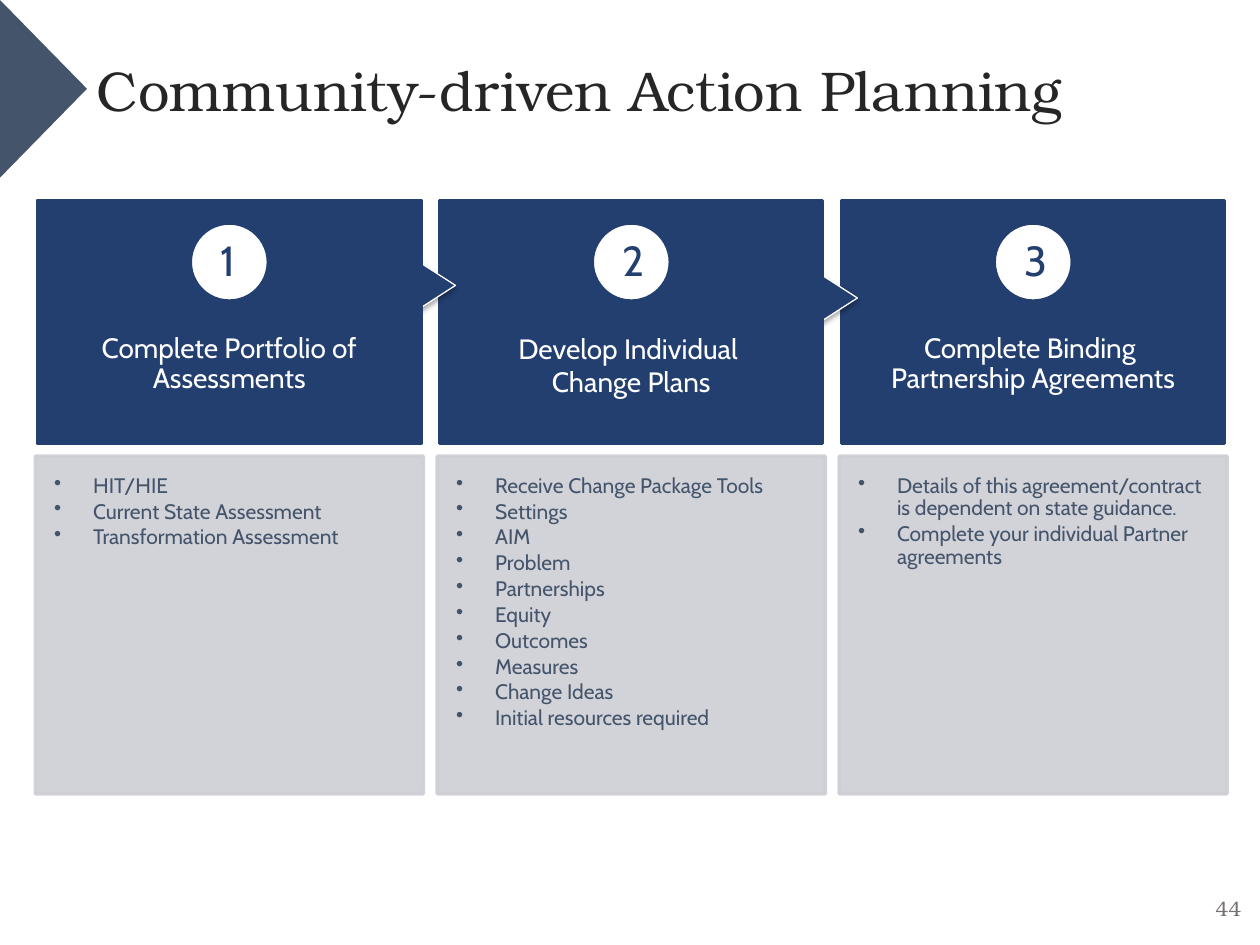
from dataclasses import dataclass
from typing import Optional

from lxml import etree
from pptx import Presentation
from pptx.dml.color import RGBColor
from pptx.enum.shapes import MSO_SHAPE
from pptx.enum.text import MSO_ANCHOR, MSO_AUTO_SIZE, PP_ALIGN
from pptx.oxml.ns import qn
from pptx.util import Inches, Pt

RECTANGLE, OVAL, TRIANGLE = MSO_SHAPE.RECTANGLE, MSO_SHAPE.OVAL, MSO_SHAPE.ISOSCELES_TRIANGLE
TOP, MIDDLE = MSO_ANCHOR.TOP, MSO_ANCHOR.MIDDLE
LEFT, CENTER = PP_ALIGN.LEFT, PP_ALIGN.CENTER
GROW = MSO_AUTO_SIZE.SHAPE_TO_FIT_TEXT


@dataclass(frozen=True)
class Theme:
    navy: str = "233F70"
    slate: str = "44546A"
    panel: str = "CDCFD5"
    white: str = "FFFFFF"
    title_color: str = "262626"
    page_color: str = "767171"
    body_font: str = "Cabin"
    title_font: str = "TeX Gyre Bonum"
    title_size: float = 32
    number_size: float = 24
    heading_size: float = 16
    body_size: float = 12
    border: float = 2
    thin_border: float = 0.75


@dataclass(frozen=True)
class Box:
    left: float
    top: float
    width: float
    height: float


@dataclass(frozen=True)
class Grid:
    left: float = 0.3
    pitch: float = 3.19
    column_width: float = 3.04
    heading_top: float = 1.59
    heading_height: float = 1.93
    panel_top: float = 3.62
    panel_height: float = 2.68
    panel_overhang: float = 0.02

    def heading(self, column: int) -> Box:
        return Box(self.left + column * self.pitch, self.heading_top,
                   self.column_width, self.heading_height)

    def panel(self, column: int) -> Box:
        return Box(self.left + column * self.pitch - self.panel_overhang, self.panel_top,
                   self.column_width + 2 * self.panel_overhang, self.panel_height)

    def centered(self, column: int, top: float, width: float, height: float) -> Box:
        center = self.left + column * self.pitch + self.column_width / 2
        return Box(center - width / 2, top, width, height)


@dataclass(frozen=True)
class TextStyle:
    size: float
    color: str
    font: str
    align: PP_ALIGN = LEFT
    line_spacing: Optional[float] = None
    space_after: float = 0
    bullet_indent: float = 0


@dataclass(frozen=True)
class Step:
    heading: tuple[str, ...]
    items: tuple[str, ...]
    arrow_top: Optional[float] = None
    heading_spacing: Optional[float] = 0.9
    heading_space_after: float = 5.6


THEME = Theme()
GRID = Grid()
DEFAULT_INSETS = (0.1, 0.05, 0.1, 0.05)
STEPS = (
    Step(("Complete Portfolio of Assessments",),
         ("HIT/HIE", "Current State Assessment", "Transformation Assessment"), 2.04),
    Step(("Develop Individual ", "Change Plans"),
         ("Receive Change Package Tools", "Settings", "AIM", "Problem", "Partnerships",
          "Equity", "Outcomes", "Measures", "Change Ideas", "Initial resources required"),
         2.14, None, 0),
    Step(("Complete Binding \vPartnership Agreements",),
         ("Details of this agreement/contract is dependent on state guidance.",
          "Complete your individual Partner agreements")),
)


def place(box: Box) -> tuple[int, ...]:
    return tuple(Inches(value) for value in (box.left, box.top, box.width, box.height))


def add_bullet(paragraph, indent: float) -> None:
    properties = paragraph._p.get_or_add_pPr()
    properties.set("marL", str(Inches(indent)))
    properties.set("indent", str(-Inches(indent)))
    etree.SubElement(properties, qn("a:buChar"), char="•")


def write_text(shape, lines: tuple[str, ...], style: TextStyle,
               insets=DEFAULT_INSETS, anchor=TOP) -> None:
    frame = shape.text_frame
    frame.word_wrap = True
    frame.vertical_anchor = anchor
    (frame.margin_left, frame.margin_top,
     frame.margin_right, frame.margin_bottom) = map(Inches, insets)
    frame.text = "\n".join(lines)
    for paragraph in frame.paragraphs:
        if style.bullet_indent:
            add_bullet(paragraph, style.bullet_indent)
        paragraph.alignment = style.align
        paragraph.line_spacing = style.line_spacing
        paragraph.space_after = Pt(style.space_after)
        paragraph.font.size = Pt(style.size)
        paragraph.font.name = style.font
        paragraph.font.color.rgb = RGBColor.from_string(style.color)


def add_filled(slide, kind: MSO_SHAPE, box: Box, fill: str, line: str, width: float):
    shape = slide.shapes.add_shape(kind, *place(box))
    shape.shadow.inherit = False
    shape.fill.solid()
    shape.fill.fore_color.rgb = RGBColor.from_string(fill)
    shape.line.color.rgb = RGBColor.from_string(line)
    shape.line.width = Pt(width)
    return shape


def add_label(slide, box: Box, text: str, style: TextStyle,
              insets=DEFAULT_INSETS, anchor=TOP):
    label = slide.shapes.add_textbox(*place(box))
    write_text(label, (text,), style, insets, anchor)
    return label


def set_opacity(shape, percent: int) -> None:
    for color in shape.element.spPr.iter(qn("a:srgbClr")):
        etree.SubElement(color, qn("a:alpha"), val=str(percent * 1000))


def add_arrow(slide, column: int, top: float) -> None:
    width, height = 0.58, 0.45
    edge = GRID.left + column * GRID.pitch + GRID.column_width
    arrow = add_filled(slide, TRIANGLE, Box(edge + 0.05 - width / 2, top, width, height),
                       THEME.navy, THEME.white, THEME.thin_border)
    arrow.rotation = 90
    effects = arrow.element.spPr.find(qn("a:effectLst"))
    shadow = etree.SubElement(effects, qn("a:outerShdw"), blurRad=str(Pt(3.1)),
                              dist=str(Pt(1.8)), dir="5400000", rotWithShape="0")
    color = etree.SubElement(shadow, qn("a:srgbClr"), val="000000")
    etree.SubElement(color, qn("a:alpha"), val="35000")


def add_step(slide, column: int, step: Step) -> None:
    if step.arrow_top is not None:
        add_arrow(slide, column, step.arrow_top)
    heading = add_filled(slide, RECTANGLE, GRID.heading(column),
                         THEME.navy, THEME.navy, THEME.border)
    write_text(heading, step.heading,
               TextStyle(THEME.heading_size, THEME.white, THEME.body_font, CENTER,
                         step.heading_spacing, step.heading_space_after),
               (0.12, 0.75, 0.12, 0.07), MIDDLE)
    add_filled(slide, OVAL, GRID.centered(column, 1.77, 0.62, 0.62),
               THEME.white, THEME.navy, THEME.border)
    number = add_label(slide, GRID.centered(column, 1.81, 0.34, 0.5), str(column + 1),
                       TextStyle(THEME.number_size, THEME.navy, THEME.body_font))
    number.text_frame.auto_size = GROW
    panel = add_filled(slide, RECTANGLE, GRID.panel(column),
                       THEME.panel, THEME.panel, THEME.border)
    set_opacity(panel, 90)
    write_text(panel, step.items,
               TextStyle(THEME.body_size, THEME.slate, THEME.body_font, LEFT, 0.9, 1.8, 0.31),
               (0.15, 0.15, 0.2, 0.23))


def add_corner_marker(slide) -> None:
    width, height = Inches(0.69), Inches(1.41)
    builder = slide.shapes.build_freeform(0, 0)
    builder.add_line_segments([(width, height // 2), (0, height)], close=True)
    marker = builder.convert_to_shape()
    marker.shadow.inherit = False
    marker.fill.solid()
    marker.fill.fore_color.rgb = RGBColor.from_string(THEME.slate)
    marker.line.fill.background()


def main() -> None:
    presentation = Presentation()
    presentation.slide_width, presentation.slide_height = Inches(10), Inches(7.5)
    slide = presentation.slides.add_slide(presentation.slide_layouts[6])
    add_corner_marker(slide)
    add_label(slide, Box(0.77, 0.06, 9, 1.25), "Community-driven Action Planning",
              TextStyle(THEME.title_size, THEME.title_color, THEME.title_font),
              (0, 0.05, 0, 0), MIDDLE)
    for column, step in reversed(tuple(enumerate(STEPS))):
        add_step(slide, column, step)
    add_label(slide, Box(9.5, 7.01, 0.5, 0.4), "44",
              TextStyle(THEME.body_size, THEME.page_color, THEME.title_font, CENTER),
              anchor=MIDDLE)
    presentation.save("out.pptx")


if __name__ == "__main__":
    main()
